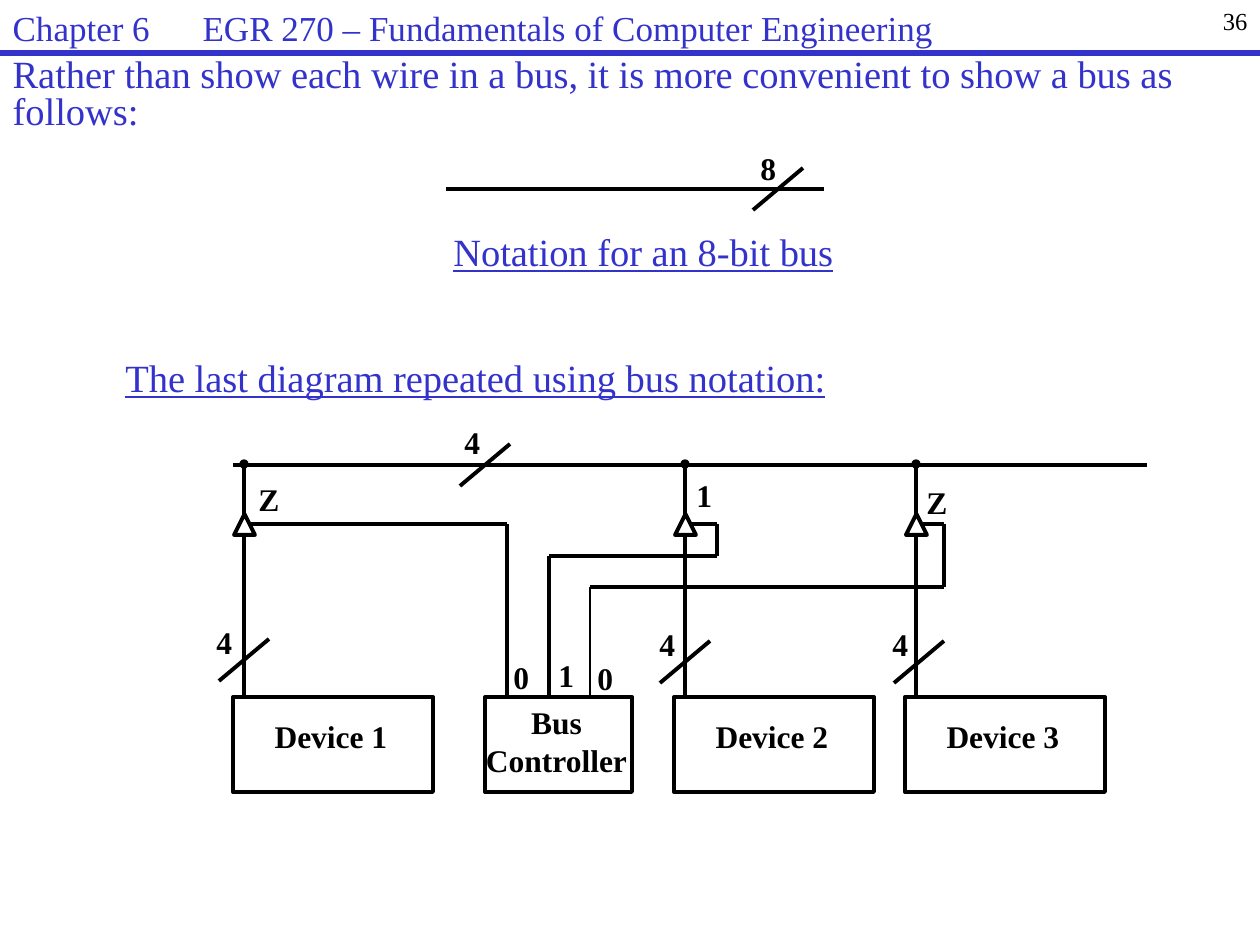
from dataclasses import dataclass

from lxml import etree
from pptx import Presentation
from pptx import util as u
from pptx.dml.color import RGBColor
from pptx.enum import shapes, text
from pptx.oxml.ns import qn

PX = 914400 // 126
FONT = "Times New Roman"
COLORS = {"ink": "000000", "accent": "3333CC", "paper": "FFFFFF"}
BUS_Y, GATE_Y, BOX_Y = 465, 524, 697


@dataclass(frozen=True)
class Device:
    name: str
    trunk: int


@dataclass(frozen=True)
class Label:
    text: str
    x: int
    y: int
    w: int = 41


@dataclass(frozen=True)
class Wire:
    points: tuple
    last_width: float = 2.25


DEVICES = [Device("Device 1", 244), Device("Device 2", 685), Device("Device 3", 916)]
WIRES = [
    Wire(((244, GATE_Y), (507, GATE_Y), (507, BOX_Y))),
    Wire(((685, GATE_Y), (717, GATE_Y), (717, 556), (549, 556), (549, BOX_Y))),
    Wire(((916, GATE_Y), (944, GATE_Y), (944, 587), (590, 587), (590, BOX_Y)), 0.75),
    Wire(((233, BUS_Y), (1147, BUS_Y))),
    Wire(((446, 189), (824, 189))),
]
SLASHES = [(778, 189), (485, BUS_Y), (244, 660), (685, 662), (919, 662)]
LABELS = [
    Label("8", 748, 143), Label("4", 452, 417),
    Label("4", 204, 617), Label("4", 647, 619), Label("4", 880, 619),
    Label("Z", 246, 474, 47), Label("1", 684, 470), Label("Z", 914, 477, 47),
    Label("0", 501, 652), Label("1", 546, 650), Label("0", 585, 653),
]
HEADINGS = [
    Label("Notation for an 8-bit bus", 441, 231, 431),
    Label("The last diagram repeated using bus notation:", 113, 357, 781),
]


def px(*values: int) -> list:
    return [u.Emu(v * PX) for v in values]


def rgb(name: str) -> RGBColor:
    return RGBColor.from_string(COLORS[name])


def place(sp, x: int, y: int, w: int, h: int) -> None:
    sp.left, sp.top, sp.width, sp.height = px(x, y, w, h)


def write(sp, words: str, size: int, color: str = "ink", bold: bool = False,
          underline: bool = False, align=text.PP_ALIGN.LEFT, wrap: bool = True):
    tf = sp.text_frame
    tf.text = words
    tf.word_wrap = wrap
    tf.auto_size = text.MSO_AUTO_SIZE.NONE
    tf.vertical_anchor = text.MSO_ANCHOR.TOP
    for p in tf.paragraphs:
        p.alignment = align
        for r in p.runs:
            r.font.name, r.font.size = FONT, u.Pt(size)
            r.font.bold, r.font.underline = bold, underline
            r.font.color.rgb = rgb(color)
    return tf


def add_text(s, label: Label, h: int, size: int, **style):
    return write(s.shapes.add_textbox(*px(label.x, label.y, label.w, h)),
                 label.text, size, **style)


def tighten(tf) -> None:
    p = tf.paragraphs[0]
    p.line_spacing, p.space_before = 0.8, u.Pt(4.4)


def add_line(s, start: tuple, end: tuple, width: float = 2.25, color: str = "ink") -> None:
    c = s.shapes.add_connector(shapes.MSO_CONNECTOR.STRAIGHT, *px(*start, *end))
    c.line.width, c.line.color.rgb = u.Pt(width), rgb(color)
    etree.SubElement(c._element.spPr, qn("a:effectLst"))


def add_wire(s, wire: Wire) -> None:
    pairs = list(zip(wire.points, wire.points[1:]))
    for start, end in pairs[:-1]:
        add_line(s, start, end)
    add_line(s, *pairs[-1], width=wire.last_width)


def add_shape(s, kind, x: int, y: int, w: int, h: int, fill: str = "", width: float = 2.25):
    sp = s.shapes.add_shape(kind, *px(x, y, w, h))
    sp.shadow.inherit = False
    sp.line.width, sp.line.color.rgb = u.Pt(width), rgb("ink")
    if fill:
        sp.fill.solid()
        sp.fill.fore_color.rgb = rgb(fill)
    else:
        sp.fill.background()
    return sp


def add_block(s, name: str, x: int, w: int, top: int) -> None:
    sp = add_shape(s, shapes.MSO_SHAPE.RECTANGLE, x, BOX_Y, w, 95)
    tf = write(sp, name, 18, bold=True, align=text.PP_ALIGN.CENTER, wrap=False)
    tf.margin_left, tf.margin_top, tf.margin_right, tf.margin_bottom = px(0, top, 4, 0)


def add_device(s, device: Device) -> None:
    x = device.trunk
    add_line(s, (x, BUS_Y), (x, 570))
    add_line(s, (x, 570), (x, BOX_Y))
    add_shape(s, shapes.MSO_SHAPE.ISOSCELES_TRIANGLE, x - 10, 514, 21, 21, "paper")
    add_shape(s, shapes.MSO_SHAPE.OVAL, x - 4, BUS_Y - 5, 8, 8, "ink", 0.75)
    add_block(s, device.name, x - 11, 200, 20)


def add_header(s) -> None:
    title = s.shapes.title
    place(title, 0, 0, 1166, 53)
    tf = write(title, "Chapter 6\tEGR 270 – Fundamentals of Computer Engineering", 20, "accent")
    p = tf.paragraphs[0]
    p.space_before = u.Pt(4)
    tabs = etree.SubElement(p._p.get_or_add_pPr(), qn("a:tabLst"))
    etree.SubElement(tabs, qn("a:tab"), pos=str(190 * PX), algn="l")
    add_line(s, (0, 53), (1260, 53), 3, "accent")
    add_text(s, Label("36", 1176, 0, 84), 53, 14, align=text.PP_ALIGN.RIGHT)


def add_intro(s) -> None:
    body = s.placeholders[1]
    place(body, 0, 53, 1260, 89)
    tf = write(body, "Rather than show each wire in a bus, it is more convenient "
               "to show a bus as follows:", 22, "accent")
    tighten(tf)
    pPr = tf.paragraphs[0]._p.get_or_add_pPr()
    pPr.set("marL", "0")
    pPr.set("indent", "0")
    etree.SubElement(pPr, qn("a:buNone"))


def main() -> None:
    prs = Presentation()
    prs.slide_width, prs.slide_height = u.Inches(10), u.Inches(7.5)
    s = prs.slides.add_slide(prs.slide_layouts[1])
    add_header(s)
    add_intro(s)
    for heading in HEADINGS:
        tighten(add_text(s, heading, 42, 22, color="accent", underline=True))
    for wire in WIRES:
        add_wire(s, wire)
    for device in DEVICES:
        add_device(s, device)
    add_block(s, "Bus\nController", 485, 147, 6)
    for x, y in SLASHES:
        add_line(s, (x + 25, y - 21), (x - 25, y + 21))
    for label in LABELS:
        add_text(s, label, 50, 18, bold=True, wrap=False)
    prs.save("out.pptx")


if __name__ == "__main__":
    main()
